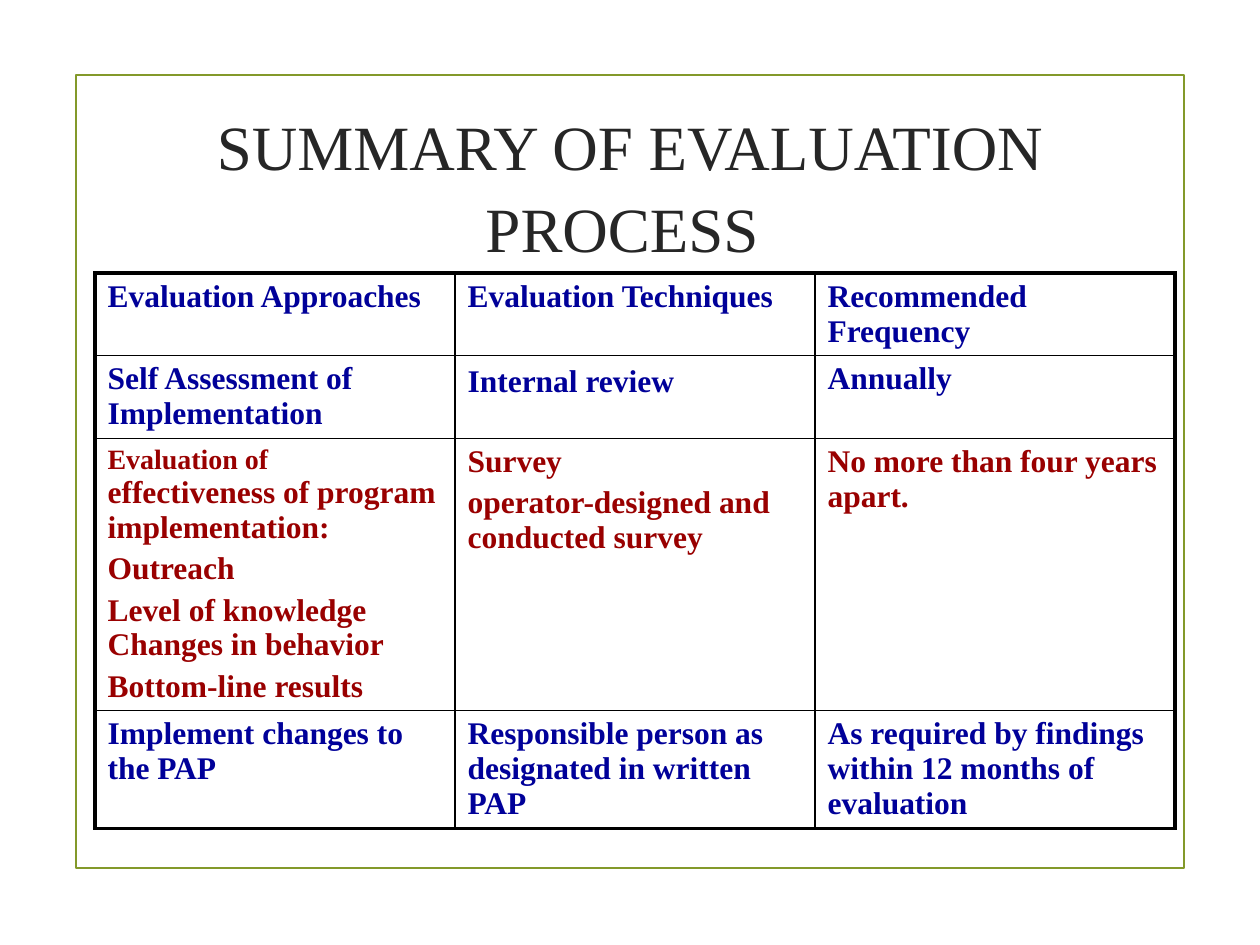
from lxml.etree import SubElement
from pptx import Presentation
from pptx.dml.color import RGBColor
from pptx.enum.shapes import MSO_SHAPE as Shape
from pptx.enum.text import MSO_ANCHOR as Anchor, PP_ALIGN as Align
from pptx.oxml.ns import qn
from pptx.util import Emu, Pt

SCALE = 914400 / 126
FONT = "Times New Roman"
COLOURS = {"frame": "83992A", "title": "262626", "border": "000000",
           "blue": "000099", "red": "990000"}
THIN, THICK = 1, 2.25

COLUMN_WIDTH = 360
ROW_HEIGHTS = [82, 83, 271, 118]
ROW_COLOURS = ["blue", "blue", "red", "blue"]
# Each cell is a list of paragraphs, each paragraph a list of (text, size) runs.
ROWS = [
    [[[("Evaluation Approaches", 18)]],
     [[("Evaluation Techniques", 18)]],
     [[("Recommended Frequency", 18)]]],
    [[[("Self Assessment of Implementation", 18)]],
     [[("Internal review", 18), (" ", 20)]],
     [[("Annually", 18)]]],
    [[[("Evaluation of ", 16), ("effectiveness of program implementation:", 18)],
      [("Outreach", 18)],
      [("Level of knowledge Changes in behavior", 18)],
      [("Bottom-line results", 18)]],
     [[("Survey", 18)],
      [("operator-designed and conducted survey", 18)]],
     [[("No more than four years apart.", 18)]]],
    [[[("Implement changes to the PAP", 18)]],
     [[("Responsible person as designated in written PAP", 18)]],
     [[("As required by findings within 12 months of evaluation", 18)]]],
]


def px(length):
    return Emu(round(length * SCALE))


def colour(name):
    return RGBColor.from_string(COLOURS[name])


class SlideBuilder:
    def __init__(self, page):
        self.page = page

    def add_run(self, para, text, size, colour_name, bold=False):
        span = para.add_run()
        span.text = text
        span.font.name = FONT
        span.font.size = Pt(size)
        span.font.bold = bold
        span.font.color.rgb = colour(colour_name)

    def frame(self, left, top, width, height):
        box = self.page.shapes.add_shape(
            Shape.RECTANGLE, px(left), px(top), px(width), px(height))
        box.shadow.inherit = False
        box.fill.background()
        box.line.color.rgb = colour("frame")
        box.line.width = Pt(1.25)

    def title(self, text, left, top, width, height):
        box = self.page.shapes.title
        box.left, box.top = px(left), px(top)
        box.width, box.height = px(width), px(height)
        box.text_frame.word_wrap = True
        box.text_frame.vertical_anchor = Anchor.MIDDLE
        para = box.text_frame.paragraphs[0]
        para.alignment = Align.CENTER
        para.line_spacing = 1.08
        self.add_run(para, text, 36, "title")

    def borders(self, cell, widths):
        """Draw the cell's sides; widths maps L, R, T and B to points."""
        properties = cell._tc.get_or_add_tcPr()
        for side in "LRTB":
            line = SubElement(properties, qn(f"a:ln{side}"), w=str(Pt(widths[side])))
            fill = SubElement(line, qn("a:solidFill"))
            SubElement(fill, qn("a:srgbClr"), val=COLOURS["border"])

    def cell_text(self, cell, paragraphs, colour_name):
        for index, runs in enumerate(paragraphs):
            text_frame = cell.text_frame
            para = text_frame.add_paragraph() if index else text_frame.paragraphs[0]
            if index:
                para.space_before = Pt(3.6)
            for text, size in runs:
                self.add_run(para, text, size, colour_name, bold=True)

    def table(self, left, top):
        row_count, column_count = len(ROWS), len(ROWS[0])
        table = self.page.shapes.add_table(
            row_count, column_count, px(left), px(top),
            px(COLUMN_WIDTH * column_count), px(sum(ROW_HEIGHTS))).table
        table.first_row = table.horz_banding = False
        for column in table.columns:
            column.width = px(COLUMN_WIDTH)
        for r, cells in enumerate(ROWS):
            table.rows[r].height = px(ROW_HEIGHTS[r])
            for c, paragraphs in enumerate(cells):
                cell = table.cell(r, c)
                outer = {"L": c == 0, "R": c == column_count - 1,
                         "T": r == 0, "B": r == row_count - 1}
                self.borders(cell, {side: THICK if edge else THIN
                                    for side, edge in outer.items()})
                cell.fill.background()
                self.cell_text(cell, paragraphs, ROW_COLOURS[r])


def main():
    deck = Presentation()
    deck.slide_width, deck.slide_height = px(1260), px(945)
    builder = SlideBuilder(deck.slides.add_slide(deck.slide_layouts[5]))
    builder.frame(76, 75, 1108, 793)
    builder.title("SUMMARY OF EVALUATION PROCESS ", 84, 136, 1092, 94)
    builder.table(95, 273)
    deck.save("out.pptx")


if __name__ == "__main__":
    main()
